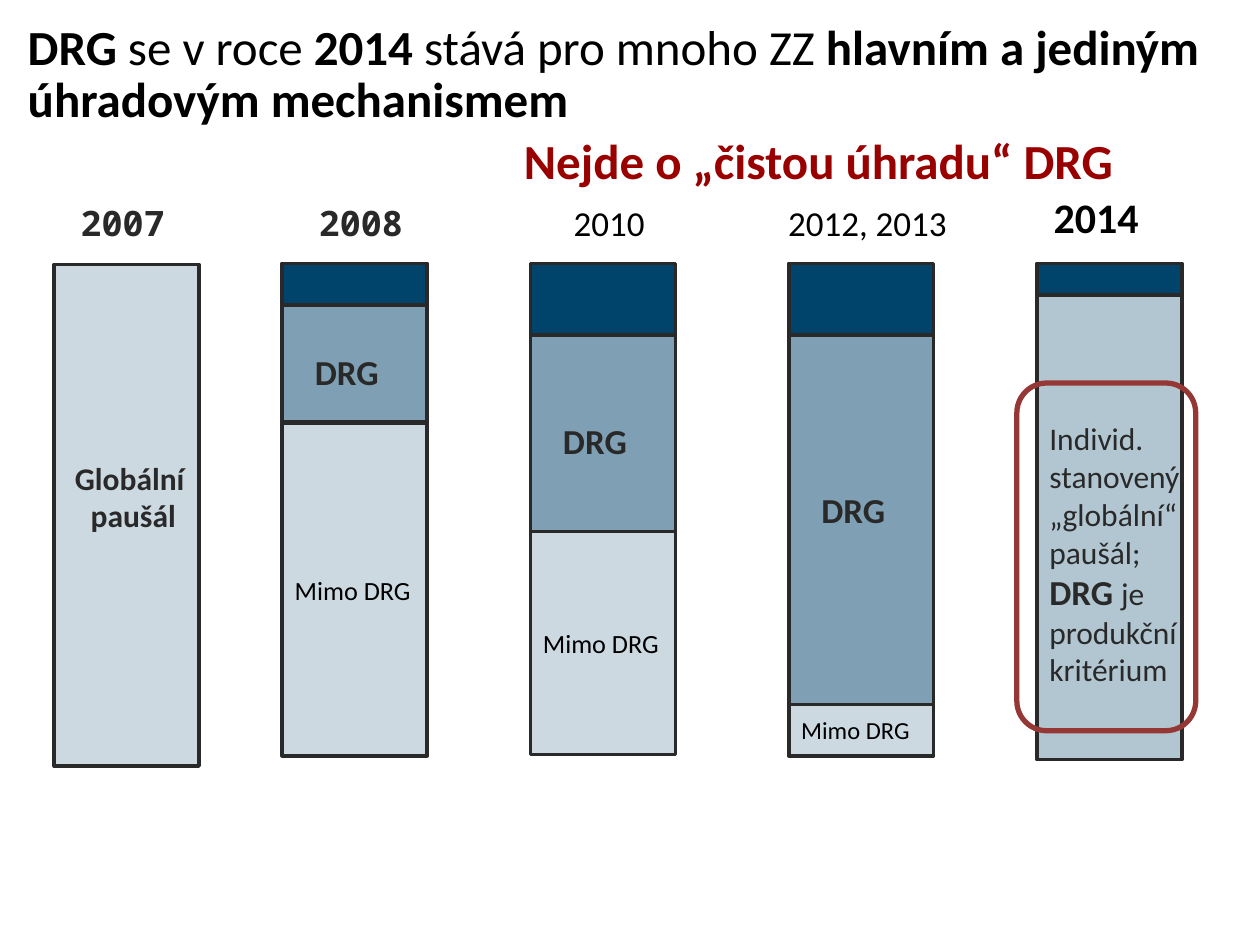
"""Build the slide on the growing share of DRG in hospital payments."""
from dataclasses import dataclass
from typing import NamedTuple, Optional

from lxml.etree import SubElement
from pptx import Presentation
from pptx.dml.color import RGBColor
from pptx.enum.shapes import MSO_SHAPE
from pptx.enum.text import MSO_ANCHOR, MSO_AUTO_SIZE, PP_ALIGN
from pptx.oxml.ns import qn
from pptx.util import Inches, Pt

NAVY, DARK, BLACK, RED, BROWN = "00436B", "292929", "000000", "990000", "953735"
BODY_FONT, YEAR_FONT = "Calibri", "Noto Sans Mono"
BAR_WIDTH = 1.15


class Run(NamedTuple):
    """A stretch of text in one format."""

    text: str
    size: float
    color: str = DARK
    bold: bool = False
    font: str = BODY_FONT


class Box(NamedTuple):
    """A place on the slide in inches."""

    left: float
    top: float
    width: float
    height: float


@dataclass
class Segment:
    """One layer of a payment bar."""

    top: float
    height: float
    opacity: int
    label: Optional[Run] = None


@dataclass
class Bar:
    """The payment mix of one period, layers listed from back to front."""

    left: float
    year: Run
    year_box: Box
    segments: list[Segment]
    drg_top: Optional[float] = None


def rgb(code: str) -> RGBColor:
    """Turn a hex string into a colour."""
    return RGBColor.from_string(code)


def place(shape, box: Box) -> None:
    """Move and size a shape."""
    shape.left, shape.top, shape.width, shape.height = map(Inches, box)


def write(frame, paragraphs: list[list[Run]], align=PP_ALIGN.LEFT, spacing=None) -> None:
    """Fill a text frame run by run."""
    for index, runs in enumerate(paragraphs):
        paragraph = frame.add_paragraph() if index else frame.paragraphs[0]
        paragraph.alignment = align
        paragraph.line_spacing = spacing
        for part in runs:
            run = paragraph.add_run()
            run.text = part.text
            run.font.size = Pt(part.size)
            run.font.name = part.font
            run.font.bold = part.bold
            run.font.color.rgb = rgb(part.color)


def add_text(slide, box: Box, paragraphs: list[list[Run]], align=PP_ALIGN.LEFT) -> None:
    """Add a wrapped text box."""
    frame = slide.shapes.add_textbox(*map(Inches, box)).text_frame
    frame.word_wrap = True
    write(frame, paragraphs, align)


def add_outlined(slide, kind, box: Box, line: str, width: float):
    """Add an outlined shape without a shadow."""
    shape = slide.shapes.add_shape(kind, *map(Inches, box))
    shape.shadow.inherit = False
    shape.line.color.rgb = rgb(line)
    shape.line.width = Pt(width)
    return shape


def add_segment(slide, left: float, segment: Segment) -> None:
    """Draw one layer of a bar with its label."""
    box = Box(left, segment.top, BAR_WIDTH, segment.height)
    shape = add_outlined(slide, MSO_SHAPE.RECTANGLE, box, DARK, 2)
    shape.fill.solid()
    shape.fill.fore_color.rgb = rgb(NAVY)
    if segment.opacity < 100:
        color = shape._element.spPr.find(qn("a:solidFill")).find(qn("a:srgbClr"))
        SubElement(color, qn("a:alpha")).set("val", str(segment.opacity * 1000))
    if segment.label:
        shape.text_frame.word_wrap = False
        shape.text_frame.vertical_anchor = MSO_ANCHOR.MIDDLE
        write(shape.text_frame, [[segment.label]])


def add_bar(slide, bar: Bar) -> None:
    """Draw a bar, its year and its DRG label."""
    for segment in bar.segments:
        add_segment(slide, bar.left, segment)
    add_text(slide, bar.year_box, [[bar.year]], PP_ALIGN.CENTER)
    if bar.drg_top is not None:
        box = Box(bar.left + 0.16, bar.drg_top, 0.83, 0.49)
        add_text(slide, box, [[Run("DRG", 20, bold=True)]])


def outside_drg(size: float) -> Run:
    """Label the part paid outside DRG."""
    return Run("Mimo DRG", size, BLACK)


BARS = [
    Bar(0.43, Run("2007", 20, DARK, True, YEAR_FONT), Box(0.51, 1.55, 0.93, 0.44),
        [Segment(2.1, 3.98, 20)]),
    Bar(2.24, Run("2008", 20, DARK, True, YEAR_FONT), Box(2.4, 1.55, 0.93, 0.44),
        [Segment(2.41, 0.94, 50), Segment(2.09, 0.33, 100),
         Segment(3.36, 2.64, 20, outside_drg(15))], 2.73),
    Bar(4.21, Run("2010", 20, BLACK), Box(4.37, 1.55, 0.93, 0.44),
        [Segment(2.41, 1.81, 50), Segment(2.09, 0.57, 100),
         Segment(4.22, 1.77, 20, outside_drg(15))], 3.28),
    Bar(6.26, Run("2012, 2013", 20, BLACK), Box(5.94, 1.55, 1.89, 0.44),
        [Segment(2.41, 3.18, 50), Segment(2.09, 0.57, 100),
         Segment(5.59, 0.41, 20, outside_drg(14))], 3.83),
    Bar(8.23, Run("2014", 24, BLACK, True), Box(8.15, 1.47, 1.1, 0.5),
        [Segment(2.33, 3.7, 30), Segment(2.09, 0.25, 100)]),
]

TITLE = [
    Run("DRG", 28, BLACK, True),
    Run(" se v roce ", 28, BLACK),
    Run("2014", 28, BLACK, True),
    Run(" stává pro mnoho ZZ ", 28, BLACK),
    Run("hlavním a jediným úhradovým mechanismem", 28, BLACK, True),
]

LUMP_SUM = [[Run("Globální", 18, bold=True)], [Run(" paušál", 18, bold=True)]]

INDIVIDUAL_SUM = [
    [Run("Individ. stanovený „globální“ paušál;", 18)],
    [Run("DRG ", 20, bold=True), Run("je produkční kritérium", 18)],
]


def main() -> None:
    """Build and save the slide."""
    presentation = Presentation()
    presentation.slide_width, presentation.slide_height = Inches(10), Inches(7.5)
    slide = presentation.slides.add_slide(presentation.slide_layouts[5])

    title = slide.shapes.title
    place(title, Box(0.12, 0.13, 9.74, 0.96))
    title.text_frame.auto_size = MSO_AUTO_SIZE.NONE
    title.text_frame.vertical_anchor = MSO_ANCHOR.TOP
    write(title.text_frame, [TITLE], spacing=0.9)

    for bar in BARS:
        add_bar(slide, bar)
    add_text(slide, Box(0.28, 3.59, 1.5, 0.49), LUMP_SUM, PP_ALIGN.CENTER)
    add_text(slide, Box(8.23, 3.28, 1.42, 2.56), INDIVIDUAL_SUM)
    add_text(slide, Box(4.06, 0.99, 5.75, 0.57),
             [[Run("Nejde o „čistou úhradu“ DRG", 28, RED, True)]])
    frame_box = Box(8.07, 3.04, 1.42, 2.76)
    add_outlined(slide, MSO_SHAPE.ROUNDED_RECTANGLE, frame_box, BROWN, 3).fill.background()

    presentation.save("out.pptx")


if __name__ == "__main__":
    main()
